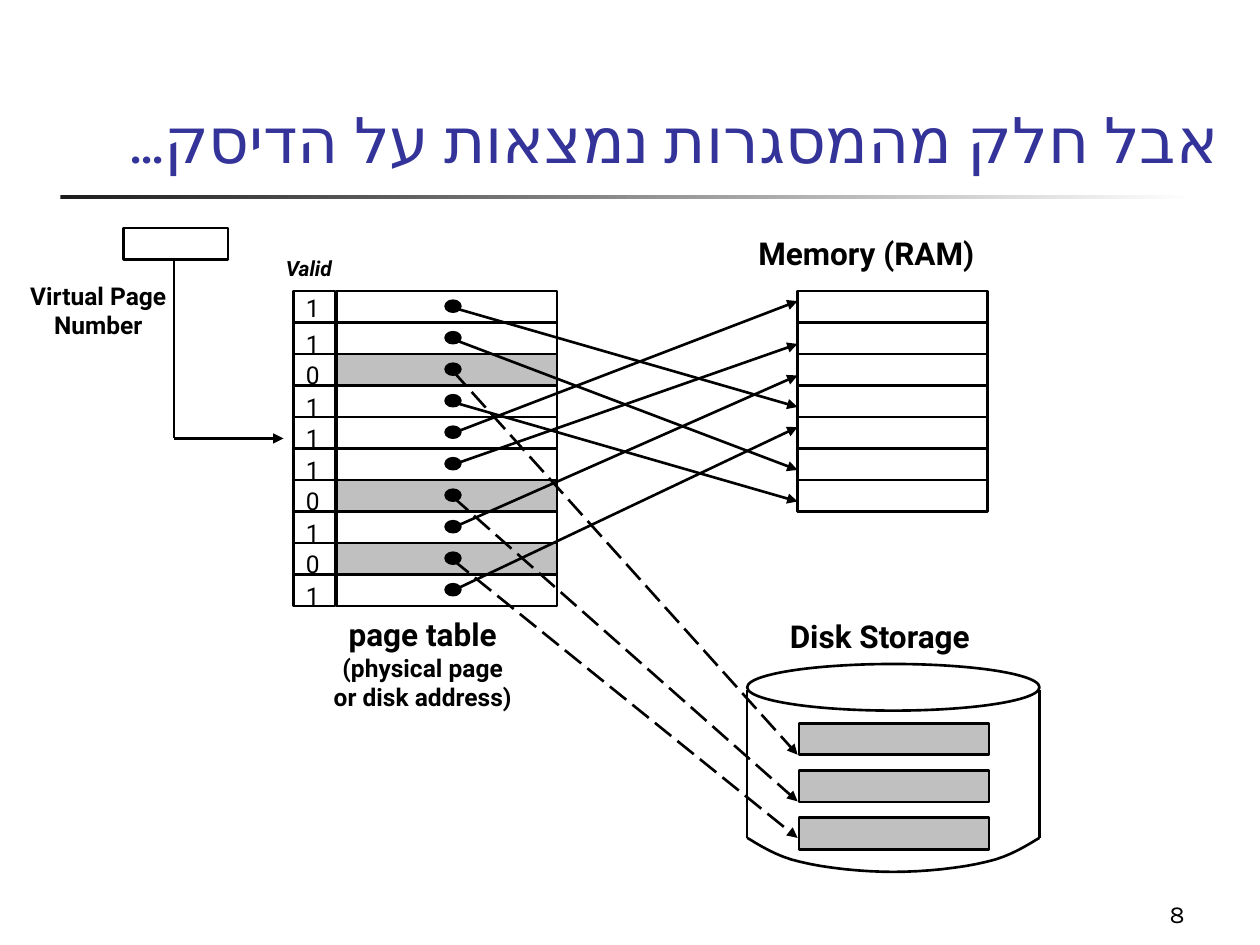
from lxml.etree import SubElement
from pptx import Presentation
from pptx.dml.color import RGBColor
from pptx.enum.dml import MSO_LINE
from pptx.enum.shapes import MSO_CONNECTOR, MSO_SHAPE
from pptx.enum.text import MSO_ANCHOR, PP_ALIGN
from pptx.oxml.ns import qn
from pptx.util import Inches, Pt

BLACK, WHITE, GRAY, INDIGO = "000000", "FFFFFF", "C0C0C0", "333399"
ROW_HEIGHT = 0.25
DISK_PITCH = 0.375
# Valid bit of each page and the height at which its arrow ends
PAGES = [(1, 3.23), (1, 3.73), (0, 5.99), (1, 3.98), (1, 2.39),
         (1, 2.73), (0, 6.36), (1, 2.98), (0, 6.65), (1, 3.39)]


def color(hex_string):
    return RGBColor.from_string(hex_string)


def style_shape(shape, fill, line_width=1.5):
    shape.shadow.inherit = False
    if fill:
        shape.fill.solid()
        shape.fill.fore_color.rgb = color(fill)
    else:
        shape.fill.background()
    shape.line.color.rgb = color(BLACK)
    shape.line.width = Pt(line_width)


def add_box(slide, left, top, width, height, fill=None,
            preset=MSO_SHAPE.RECTANGLE, line_width=1.5):
    shape = slide.shapes.add_shape(
        preset, Inches(left), Inches(top), Inches(width), Inches(height))
    style_shape(shape, fill, line_width)


def add_line(slide, start, end, arrow=False, dashed=False):
    connector = slide.shapes.add_connector(
        MSO_CONNECTOR.STRAIGHT, *(Inches(value) for value in (*start, *end)))
    connector.line.color.rgb = color(BLACK)
    connector.line.width = Pt(1.5)
    if dashed:
        connector.line.dash_style = MSO_LINE.LONG_DASH
    if arrow:
        SubElement(connector.line._get_or_add_ln(), qn("a:tailEnd"), type="triangle")
    SubElement(connector._element.spPr, qn("a:effectLst"))


def add_text(slide, left, top, width, height, lines, size, bold=True,
             italic=False, align=PP_ALIGN.LEFT, font="Roboto", fill=BLACK,
             anchor=MSO_ANCHOR.TOP, wrap=False):
    """Add one paragraph per line; size is one number or one per line."""
    box = slide.shapes.add_textbox(
        Inches(left), Inches(top), Inches(width), Inches(height))
    frame = box.text_frame
    frame.word_wrap = wrap
    frame.vertical_anchor = anchor
    frame.text = "\n".join(lines)
    sizes = size if isinstance(size, list) else [size] * len(lines)
    for paragraph, points in zip(frame.paragraphs, sizes):
        paragraph.alignment = align
        paragraph.font.name = font
        paragraph.font.size = Pt(points)
        paragraph.font.bold = bold
        paragraph.font.italic = italic
        paragraph.font.color.rgb = color(fill)
    return frame


def add_title(slide, left, top, width, height):
    frame = add_text(slide, left, top, width, height,
                     ["אבל חלק מהמסגרות נמצאות על הדיסק..."], 36, bold=False,
                     align=PP_ALIGN.RIGHT, font="Karla", fill=INDIGO,
                     anchor=MSO_ANCHOR.BOTTOM, wrap=True)
    paragraph = frame.paragraphs[0]
    paragraph._p.get_or_add_pPr().set("rtl", "1")
    run_properties = paragraph.runs[0]._r.get_or_add_rPr()
    run_properties.set("lang", "he-IL")
    SubElement(run_properties, qn("a:cs"), typeface="Karla")


def add_title_rule(slide, left, top, width, height):
    rule = slide.shapes.add_shape(
        MSO_SHAPE.RECTANGLE, Inches(left), Inches(top), Inches(width), Inches(height))
    rule.shadow.inherit = False
    rule.line.fill.background()
    rule.fill.gradient()
    rule.fill.gradient_angle = 0
    for stop, shade, position in zip(rule.fill.gradient_stops, ("1C1C1C", WHITE), (0, 1)):
        stop.color.rgb = color(shade)
        stop.position = position


def add_page_number(slide, left, top):
    """Draw the virtual page number and its arrow into the page table."""
    add_box(slide, left, top, 0.83, ROW_HEIGHT, WHITE)
    add_text(slide, left - 0.86, top + 0.37, 1.32, 0.57,
             ["Virtual Page", "Number"], 14, align=PP_ALIGN.CENTER)
    corner = (left + 0.4, top + 1.67)
    add_line(slide, (corner[0], top + ROW_HEIGHT), corner)
    add_line(slide, corner, (corner[0] + 0.87, corner[1]), arrow=True)


def add_page_table(slide, left, top):
    bit_width, address_width = 0.33, 1.75
    address_left = left + 0.34
    add_text(slide, left - 0.16, top - 0.33, 0.67, 0.3, ["Valid"], 12,
             italic=True, wrap=True)
    for row, (valid, _) in enumerate(PAGES):
        row_top = top + row * ROW_HEIGHT
        add_box(slide, address_left, row_top, address_width, ROW_HEIGHT,
                WHITE if valid else GRAY)
        add_box(slide, address_left + 0.87, row_top + 0.08, 0.11, 0.08, BLACK,
                MSO_SHAPE.OVAL, 2)
        add_box(slide, left, row_top, bit_width, ROW_HEIGHT)
        digit_top = row_top if row else row_top - 0.03
        add_text(slide, left, digit_top, 0.31, 0.33, [str(valid)], 14, bold=False)
    add_text(slide, left + 0.15, top + 2.52, 1.75, 0.87,
             ["page table", "(physical page", "or disk address)"], [18, 14, 14],
             align=PP_ALIGN.CENTER, wrap=True)


def add_memory(slide, left, top, width, frames=7):
    add_text(slide, left - 0.41, top - 0.5, 1.97, 0.4, ["Memory (RAM)"], 18)
    for row in range(frames):
        add_box(slide, left, top + row * ROW_HEIGHT, width, ROW_HEIGHT, WHITE)


def curve_points(start, control_1, control_2, end, steps=8):
    """Sample a cubic curve, leaving out its start."""
    for step in range(1, steps + 1):
        t = step / steps
        weights = ((1 - t) ** 3, 3 * t * (1 - t) ** 2, 3 * t * t * (1 - t), t ** 3)
        yield tuple(sum(weight * point[axis] for weight, point in
                        zip(weights, (start, control_1, control_2, end)))
                    for axis in (0, 1))


def add_disk(slide, left, top, width):
    add_text(slide, left + 0.24, top - 0.42, 1.73, 0.4, ["Disk Storage"], 18)
    add_box(slide, left, top, width, 0.37, preset=MSO_SHAPE.OVAL)
    side_bottom = top + 1.38
    for side in (left, left + width):
        add_line(slide, (side, top + 0.21), (side, side_bottom))

    half = [(0, 0), (0.07, 0.04), (0.23, 0.15), (0.42, 0.19),
            (0.62, 0.24), (0.92, 0.27), (width / 2, 0.27)]
    mirrored = [(width - x, y) for x, y in reversed(half[:-1])]
    controls = [(Inches(left + x), Inches(side_bottom + y)) for x, y in half + mirrored]
    builder = slide.shapes.build_freeform(*controls[0])
    for first in range(0, len(controls) - 1, 3):
        builder.add_line_segments(curve_points(*controls[first:first + 4]), close=False)
    style_shape(builder.convert_to_shape(), None)

    for row in range(3):
        add_box(slide, left + 0.41, top + 0.47 + row * DISK_PITCH, 1.51, ROW_HEIGHT, GRAY)


def add_page_arrows(slide, left, top, right):
    for row, (valid, target) in enumerate(PAGES):
        add_line(slide, (left, top + row * ROW_HEIGHT), (right, target),
                 arrow=True, dashed=not valid)


def main():
    presentation = Presentation()
    presentation.slide_width = Inches(10)
    presentation.slide_height = Inches(7.5)
    slide = presentation.slides.add_slide(presentation.slide_layouts[6])

    add_title_rule(slide, 0.48, 1.55, 9, 0.03)
    add_title(slide, 0.51, 0.68, 9.27, 0.77)
    add_page_table(slide, 2.33, 2.31)
    add_memory(slide, 6.33, 2.31, 1.51)
    add_page_arrows(slide, 3.59, 2.44, 6.33)
    add_disk(slide, 5.93, 5.27, 2.32)
    add_page_number(slide, 0.98, 1.81)
    add_text(slide, 7.42, 6.92, 2.08, 0.5, ["8"], 14, bold=False, font="Karla",
             align=PP_ALIGN.RIGHT, anchor=MSO_ANCHOR.BOTTOM, wrap=True)

    presentation.save("out.pptx")


if __name__ == "__main__":
    main()
